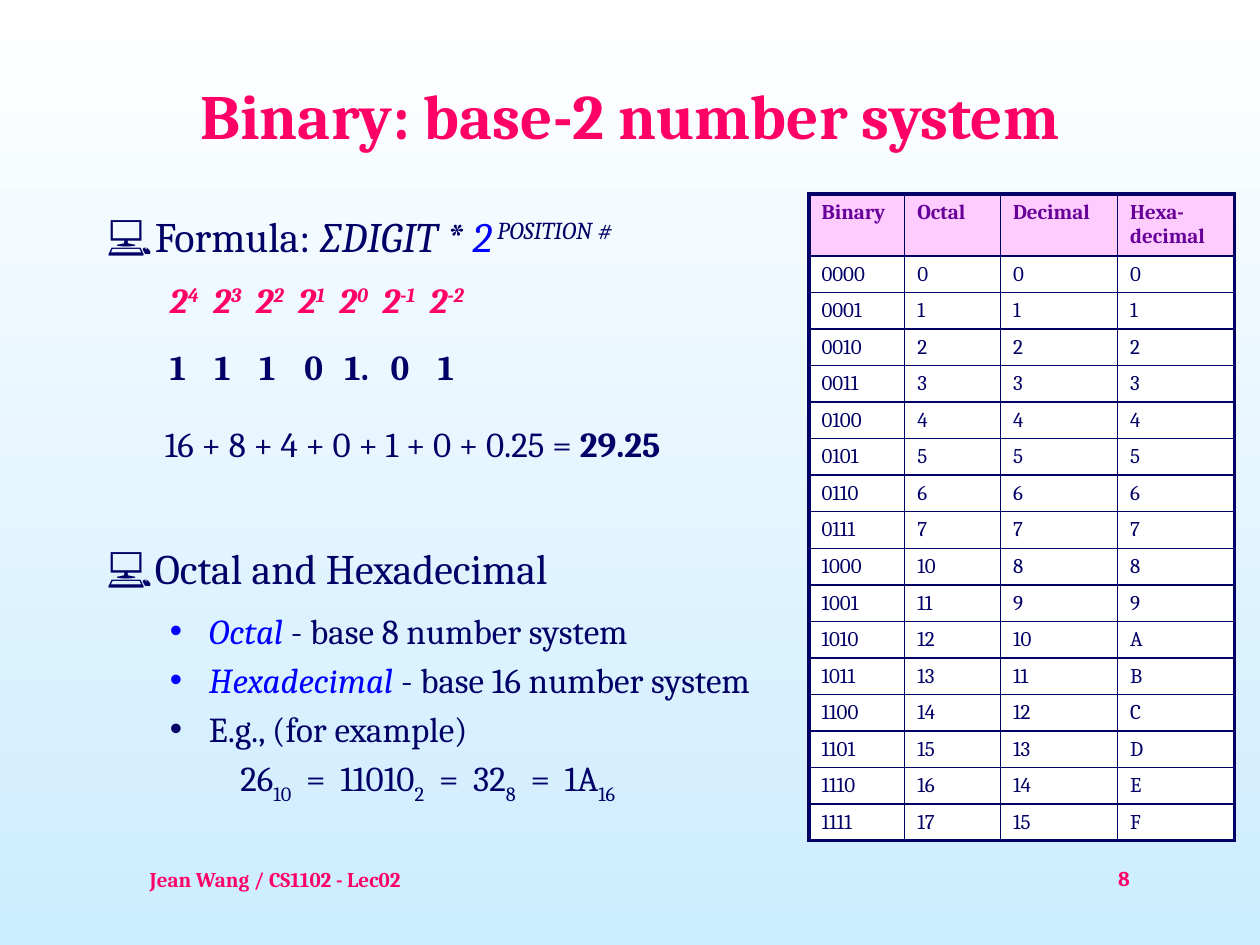
import lxml.etree
import pptx
import pptx.dml.color
import pptx.enum.text
import pptx.oxml.ns
import pptx.util

Inches, Pt = pptx.util.Inches, pptx.util.Pt
RGBColor = pptx.dml.color.RGBColor
ALIGN = pptx.enum.text.PP_ALIGN
ANCHOR = pptx.enum.text.MSO_ANCHOR

NAVY = RGBColor(0x00, 0x00, 0x66)
PINK = RGBColor(0xFF, 0x00, 0x66)
BLUE = RGBColor(0x00, 0x00, 0xFF)
PURPLE = RGBColor(0x66, 0x00, 0x99)
LILAC = RGBColor(0xFF, 0xCC, 0xFF)
WHITE = RGBColor(0xFF, 0xFF, 0xFF)
SKY = RGBColor(0xCC, 0xEC, 0xFF)
FONT = "Cambria"


def node(parent, tag, **attrs):
    """Append a DrawingML element and return it."""
    item = lxml.etree.SubElement(parent, pptx.oxml.ns.qn("a:" + tag))
    for key, value in attrs.items():
        item.set(key, str(value))
    return item


def write(para, text, size=20, color=NAVY, bold=False, italic=False,
          base=0, space=0):
    """Add a formatted run to a paragraph."""
    run = para.add_run()
    run.text = text
    font = run.font
    font.name, font.size, font.bold, font.italic = FONT, Pt(size), bold, italic
    font.color.rgb = color
    props = run._r.get_or_add_rPr()
    if base:
        props.set("baseline", str(base * 1000))
    if space:
        props.set("spc", str(round(space * 100)))


def frame(slide, box, anchor=ANCHOR.TOP):
    """Add a wrapping text box and return its text frame."""
    body = slide.shapes.add_textbox(*map(Inches, box)).text_frame
    body.word_wrap = True
    body.vertical_anchor = anchor
    return body


def line(body, left=0, first=0, bullet=None, level=0, before=0, after=0):
    """Start a paragraph with its indents, bullet and spacing."""
    para = body.paragraphs[0]
    if para.runs:
        para = body.add_paragraph()
    props = para._p.get_or_add_pPr()
    props.set("marL", str(Inches(left)))
    props.set("indent", str(Inches(first)))
    if bullet:
        face, char = bullet
        node(props, "buFont", typeface=face)
        node(props, "buChar", char=char)
    else:
        node(props, "buNone")
    para.level = level
    para.space_before, para.space_after = Pt(before), Pt(after)
    return para


def title(slide, box):
    """Place the slide title."""
    para = frame(slide, box, ANCHOR.MIDDLE).paragraphs[0]
    para.alignment = ALIGN.CENTER
    write(para, "Binary: base-2 number system", size=36, color=PINK, bold=True)


def footer(slide, box, text, left=0, align=ALIGN.LEFT):
    """Place one footer text."""
    para = line(frame(slide, box), left=left)
    para.alignment = align
    write(para, text, size=12, color=PINK, bold=True)


def content(slide, box):
    """Place the formula, the worked sum and the notes on other bases."""
    body = frame(slide, box)
    main = dict(left=0.38, first=-0.38, bullet=(FONT, "💻"), after=5)
    para = line(body, **main)
    write(para, "Formula: ", size=24)
    write(para, "∑DIGIT * ", size=24, italic=True)
    write(para, "2", size=24, color=BLUE, italic=True)
    write(para, " POSITION #", size=24, italic=True, base=30)

    para = line(body, left=0.5, level=1, before=5, after=5)
    style = dict(color=PINK, bold=True, italic=True)
    for i, power in enumerate(["4", "3", "2", "1", "0", "-1", "-2"]):
        if i:
            write(para, " ", space=3.8, **style)
        write(para, "2", **style)
        write(para, power, base=30, **style)

    para = line(body, left=0.5, before=9.3, after=5)
    gaps = [12, 12, 12, 8, 8, 12, 0]
    for digit, gap in zip(["1", "1", "1", "0", "1.", "0", "1"], gaps):
        write(para, digit, bold=True)
        if gap:
            write(para, " ", bold=True, space=gap)

    para = line(body, left=0.46, before=15, after=5)
    write(para, "16 + 8 + 4 + 0 + 1 + 0 + 0.25 = ")
    write(para, "29.25", bold=True)

    write(line(body, before=40, **main), "Octal and Hexadecimal", size=24)

    notes = [("Octal", " - base 8 number system"),
             ("Hexadecimal", " - base 16 number system"),
             ("", "E.g., (for example)")]
    for term, rest in notes:
        para = line(body, left=0.81, first=-0.31, bullet=("Arial", "•"),
                    level=1, before=4)
        if term:
            write(para, term, color=BLUE, italic=True)
        write(para, rest)

    para = line(body, left=1.06, level=2, before=4)
    values = [("26", "10"), ("11010", "2"), ("32", "8"), ("1A", "16")]
    for i, (value, radix) in enumerate(values):
        if i:
            write(para, " ", space=4)
            write(para, "=")
            write(para, " ", space=4)
        write(para, value)
        write(para, radix, base=-30)


def border(cell, sides):
    """Draw the cell's borders at the given widths."""
    props = cell._tc.get_or_add_tcPr()
    for side, width in sides.items():
        edge = node(props, "ln" + side, w=Pt(width))
        node(node(edge, "solidFill"), "srgbClr", val=NAVY)


def table(slide, box):
    """Place the table of the numbers 0 to 15 in four bases."""
    rows = [["Binary", "Octal", "Decimal", "Hexa-decimal"]]
    rows += [[f"{n:04b}", f"{n:o}", str(n), f"{n:X}"] for n in range(16)]
    widths = [0.76, 0.76, 0.93, 0.93]
    grid = slide.shapes.add_table(len(rows), len(widths), *map(Inches, box)).table
    for col, width in zip(grid.columns, widths):
        col.width = Inches(width)
    for r, row in enumerate(rows):
        head = r == 0
        grid.rows[r].height = Inches(0.48 if head else 0.29)
        for c, text in enumerate(row):
            cell = grid.cell(r, c)
            cell.margin_bottom = Inches(0.04)
            outer = dict(L=c == 0, R=c == len(widths) - 1,
                         T=head, B=r == len(rows) - 1)
            border(cell, {side: 2.25 if out else 1 for side, out in outer.items()})
            cell.fill.solid()
            cell.fill.fore_color.rgb = LILAC if head else WHITE
            write(cell.text_frame.paragraphs[0], text, size=12,
                  color=PURPLE if head else NAVY, bold=head)


def backdrop(slide):
    """Fill the background from white down to sky blue."""
    fill = slide.background.fill
    fill.gradient()
    fill.gradient_angle = 270
    for stop, color, place in zip(fill.gradient_stops, (WHITE, SKY), (0, 1)):
        stop.color.rgb = color
        stop.position = place


def main():
    """Build the deck and save it."""
    deck = pptx.Presentation()
    deck.slide_width, deck.slide_height = Inches(10), Inches(7.5)
    slide = deck.slides.add_slide(deck.slide_layouts[6])
    backdrop(slide)
    footer(slide, (0.91, 6.83, 3.07, 0.5), "Jean Wang / CS1102 - Lec02", left=0.18)
    footer(slide, (7.88, 6.82, 2.08, 0.5), "8", align=ALIGN.CENTER)
    title(slide, (0.75, 0.28, 8.5, 1.25))
    content(slide, (0.75, 1.62, 5.82, 5.12))
    table(slide, (6.42, 1.54, 3.38, 5.12))
    deck.save("out.pptx")


if __name__ == "__main__":
    main()
